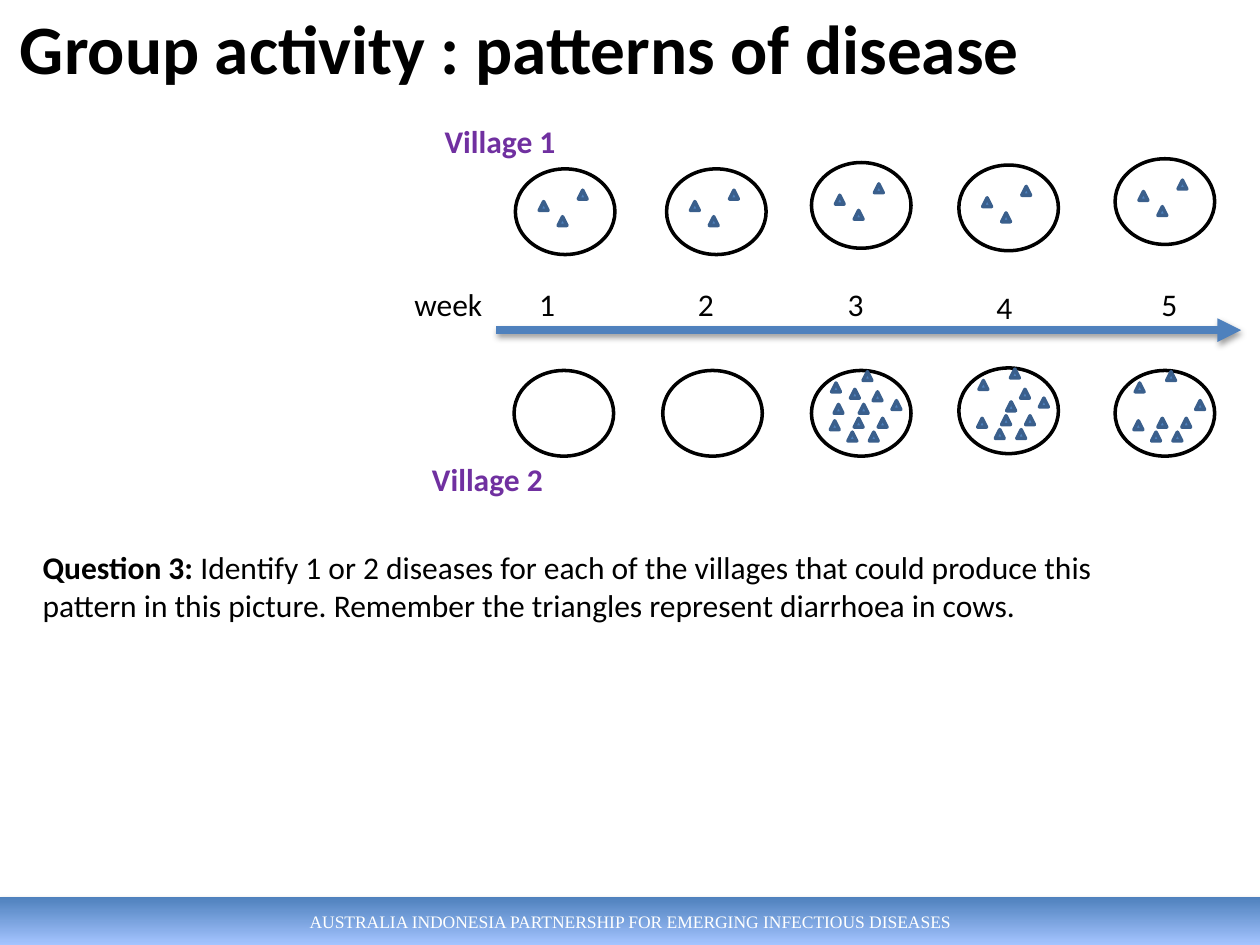
"""Build the village disease pattern slide."""
import dataclasses
import typing

import lxml.etree
import pptx
import pptx.dml.color
import pptx.enum.shapes
import pptx.enum.text
import pptx.oxml.ns
import pptx.util

Inches = pptx.util.Inches
ShapeType = pptx.enum.shapes.MSO_SHAPE
Anchor = pptx.enum.text.MSO_ANCHOR
Align = pptx.enum.text.PP_ALIGN


@dataclasses.dataclass(frozen=True)
class Theme:
    black: str = "000000"
    white: str = "FFFFFF"
    blue: str = "4F81BD"
    pale_blue: str = "A4C4FF"
    dark_blue: str = "3A5F8C"
    purple: str = "7030A0"
    body_font: str = "Calibri"
    footer_font: str = "Times New Roman"
    title_size: float = 39.6
    body_size: float = 18
    footer_size: float = 10
    outline: float = 2
    arrow: float = 4.5


@dataclasses.dataclass(frozen=True)
class Label:
    text: str
    left: float
    top: float
    width: float
    color: str
    bold: bool = False


@dataclasses.dataclass(frozen=True)
class Herd:
    left: float
    top: float
    cases: tuple


THEME = Theme()
VILLAGE_WIDTH, VILLAGE_HEIGHT, CASE_SIZE = 0.79, 0.68, 0.07
ENDEMIC = ((0.19, 0.26), (0.34, 0.38), (0.5, 0.17))
OUTBREAK = (
    (0.34, 0.38), (0.53, 0.38), (0.46, 0.49), (0.15, 0.4),
    (0.16, 0.1), (0.41, 0.01), (0.64, 0.24), (0.29, 0.49),
    (0.49, 0.17), (0.38, 0.27), (0.18, 0.27), (0.31, 0.15),
)
HERDS = (
    Herd(4.09, 1.34, ENDEMIC),
    Herd(5.29, 1.34, ENDEMIC),
    Herd(6.44, 1.29, ENDEMIC),
    Herd(7.61, 1.31, ENDEMIC),
    Herd(8.85, 1.26, ENDEMIC),
    Herd(4.08, 2.94, ()),
    Herd(5.26, 2.94, ()),
    Herd(6.44, 2.94, OUTBREAK),
    Herd(7.61, 2.92, OUTBREAK[:10]),
    Herd(8.85, 2.94, OUTBREAK[:8]),
)
WEEK_POSITIONS = ((4.18, 2.21), (5.44, 2.21), (6.63, 2.21), (7.81, 2.24), (9.12, 2.21))
LABELS = (
    Label("week", 3.19, 2.21, 0.75, THEME.black),
    *(Label(str(week), left, top, 0.33, THEME.black)
      for week, (left, top) in enumerate(WEEK_POSITIONS, 1)),
    Label("Village 1", 3.43, 0.92, 1.09, THEME.purple, True),
    Label("Village 2", 3.33, 3.6, 1.09, THEME.purple, True),
)


def rgb(color: str) -> pptx.dml.color.RGBColor:
    """Return a colour object for a hex value."""
    return pptx.dml.color.RGBColor.from_string(color)


def add_run(paragraph: typing.Any, text: str, color: str = THEME.black,
            size: float = THEME.body_size, bold: bool = False,
            name: str = THEME.body_font) -> None:
    """Append formatted text to a paragraph."""
    run = paragraph.add_run()
    run.text = text
    for key, value in {"name": name, "size": pptx.util.Pt(size), "bold": bold}.items():
        setattr(run.font, key, value)
    run.font.color.rgb = rgb(color)


def add_text_box(slide: typing.Any, left: float, top: float, width: float,
                 height: float, wrap: bool = True) -> typing.Any:
    """Add an empty text box and return its text frame."""
    shape = slide.shapes.add_textbox(*map(Inches, (left, top, width, height)))
    shape.text_frame.word_wrap = wrap
    return shape.text_frame


def add_shape(slide: typing.Any, kind: typing.Any, left: float, top: float,
              width: float, height: float, fill: str, line: str) -> None:
    """Add a filled and outlined preset shape."""
    shape = slide.shapes.add_shape(kind, *map(Inches, (left, top, width, height)))
    shape.shadow.inherit = False
    shape.fill.solid()
    shape.fill.fore_color.rgb = rgb(fill)
    shape.line.color.rgb = rgb(line)
    shape.line.width = pptx.util.Pt(THEME.outline)


def add_child(parent: typing.Any, tag: str, **attributes: str) -> typing.Any:
    """Append a drawing element with its attributes."""
    return lxml.etree.SubElement(parent, pptx.oxml.ns.qn(tag), attributes)


def add_shadow(effects: typing.Any, distance: float, opacity: int) -> None:
    """Fill an effect list with a soft shadow below the shape."""
    shadow = add_child(effects, "a:outerShdw", blurRad=str(pptx.util.Pt(3.1)),
                       dist=str(pptx.util.Pt(distance)), dir="5400000", rotWithShape="0")
    color = add_child(shadow, "a:srgbClr", val=THEME.black)
    add_child(color, "a:alpha", val=str(opacity * 1000))


def add_footer(slide: typing.Any) -> None:
    """Add the gradient band with the partnership name."""
    band = slide.shapes.add_shape(ShapeType.RECTANGLE, *map(Inches, (0, 7.12, 10, 0.38)))
    band.shadow.inherit = False
    add_shadow(band._element.spPr.find(pptx.oxml.ns.qn("a:effectLst")), 1.8, 35)
    band.line.fill.background()
    band.fill.gradient()
    band.fill.gradient_angle = 270
    for stop, color in zip(band.fill.gradient_stops, (THEME.blue, THEME.pale_blue)):
        stop.color.rgb = rgb(color)
    band.text_frame.vertical_anchor = Anchor.MIDDLE
    paragraph = band.text_frame.paragraphs[0]
    paragraph.alignment = Align.CENTER
    add_run(paragraph, "AUSTRALIA INDONESIA PARTNERSHIP FOR EMERGING INFECTIOUS DISEASES",
            THEME.white, THEME.footer_size, name=THEME.footer_font)


def add_timeline(slide: typing.Any) -> None:
    """Add the arrow that runs through the weeks."""
    arrow = slide.shapes.add_connector(pptx.enum.shapes.MSO_CONNECTOR.STRAIGHT,
                                       *map(Inches, (3.94, 2.62, 9.85, 2.62)))
    arrow.line.color.rgb = rgb(THEME.blue)
    arrow.line.width = pptx.util.Pt(THEME.arrow)
    add_child(arrow.line._get_or_add_ln(), "a:tailEnd", type="triangle")
    add_shadow(add_child(arrow._element.spPr, "a:effectLst"), 1.6, 38)


def add_herd(slide: typing.Any, herd: Herd) -> None:
    """Add one village in one week with its cases."""
    add_shape(slide, ShapeType.OVAL, herd.left, herd.top, VILLAGE_WIDTH, VILLAGE_HEIGHT,
              THEME.white, THEME.black)
    for across, down in herd.cases:
        add_shape(slide, ShapeType.ISOSCELES_TRIANGLE, herd.left + across, herd.top + down,
                  CASE_SIZE, CASE_SIZE, THEME.blue, THEME.dark_blue)


def main() -> None:
    """Build and save the presentation."""
    presentation = pptx.Presentation()
    presentation.slide_width, presentation.slide_height = Inches(10), Inches(7.5)
    slide = presentation.slides.add_slide(presentation.slide_layouts[6])
    add_footer(slide)
    title = add_text_box(slide, 0.06, -0.01, 9, 0.77)
    title.vertical_anchor = Anchor.MIDDLE
    add_run(title.paragraphs[0], "Group activity : patterns of disease",
            size=THEME.title_size, bold=True)
    add_timeline(slide)
    for herd in HERDS:
        add_herd(slide, herd)
    for label in LABELS:
        frame = add_text_box(slide, label.left, label.top, label.width, 0.4, wrap=False)
        add_run(frame.paragraphs[0], label.text, label.color, bold=label.bold)
    question = add_text_box(slide, 0.24, 4.3, 9.09, 0.71).paragraphs[0]
    add_run(question, "Question 3: ", bold=True)
    add_run(question, "Identify 1 or 2 diseases for each of the villages that could produce "
            "this pattern in this picture. Remember the triangles represent diarrhoea in cows.")
    presentation.save("out.pptx")


if __name__ == "__main__":
    main()
